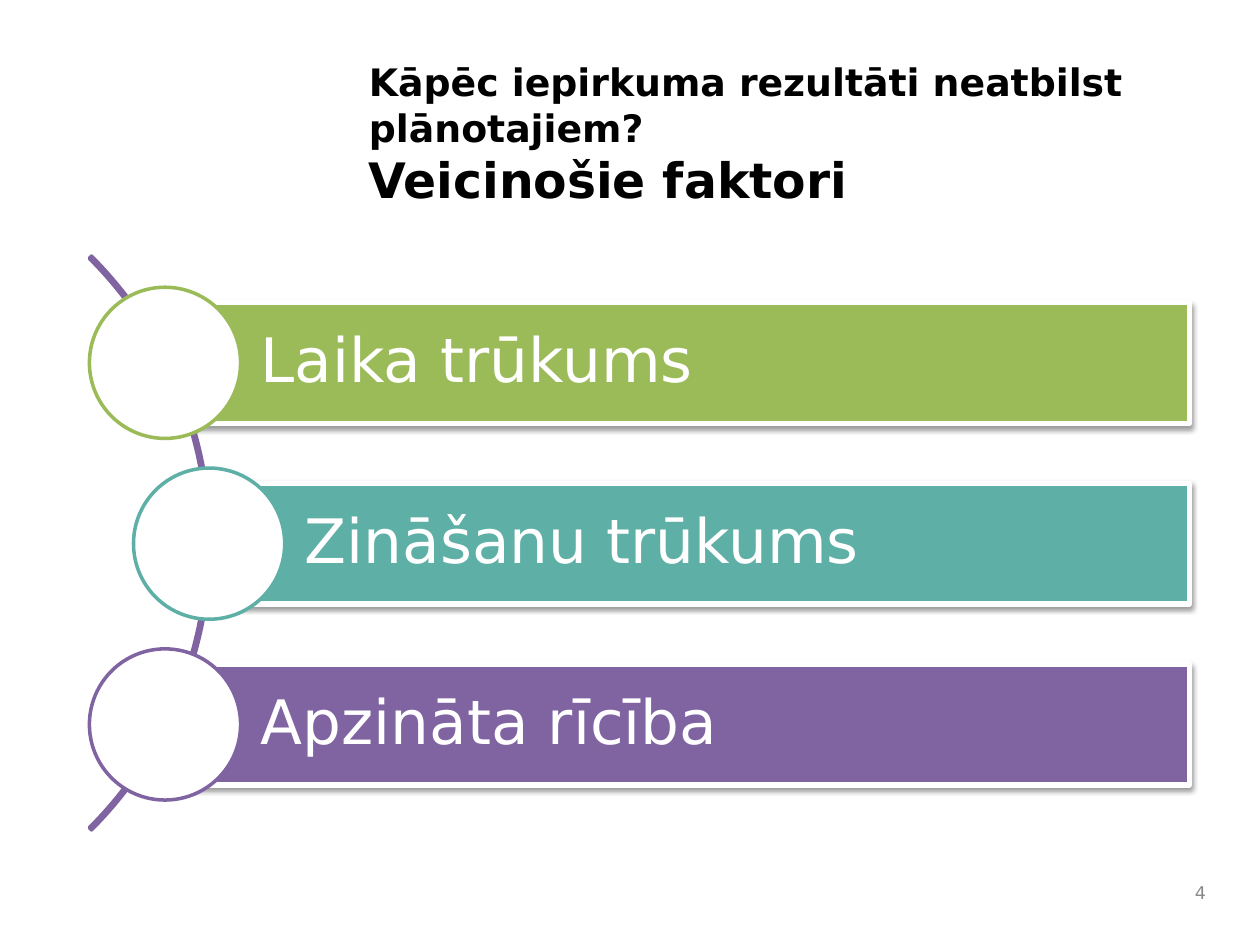
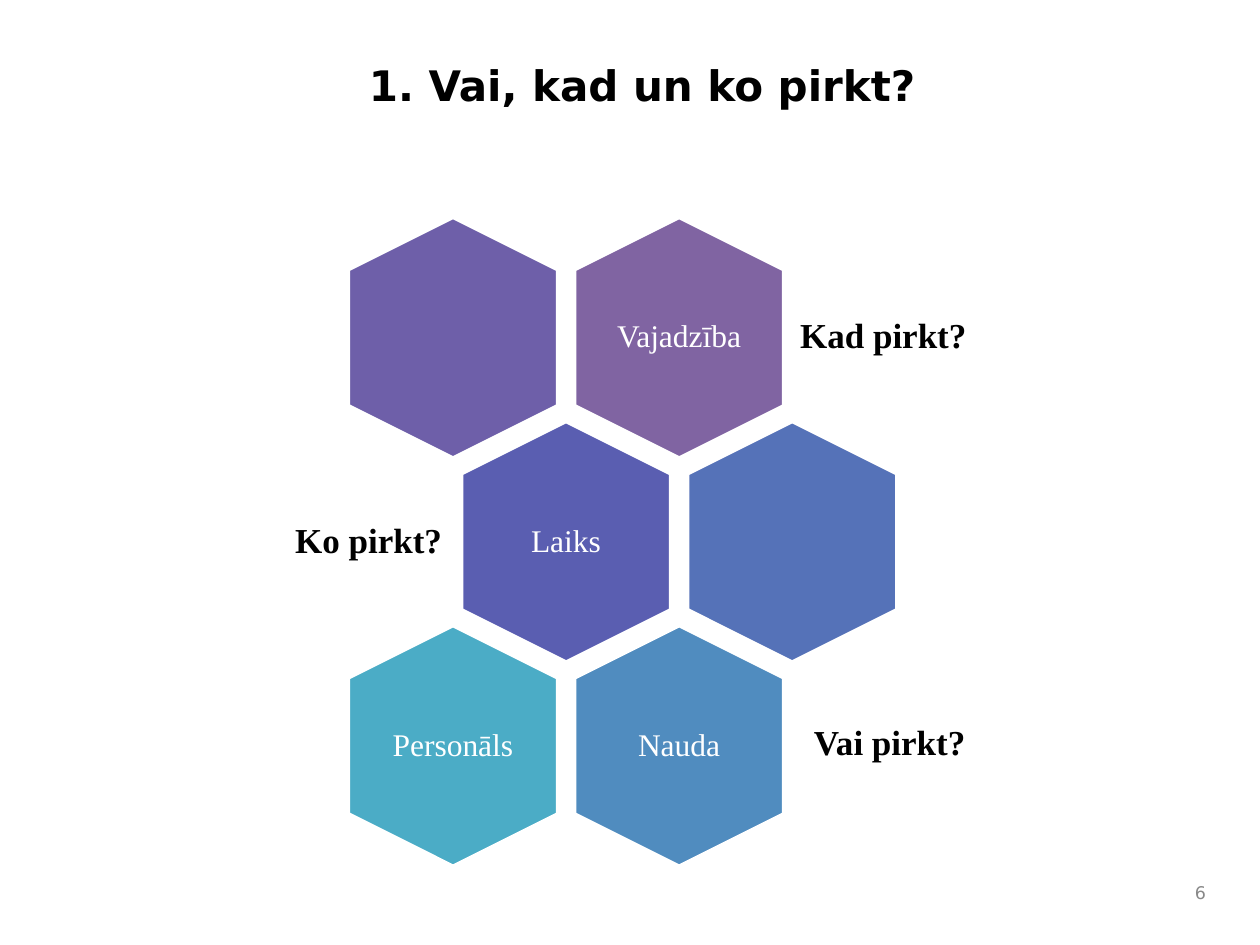
from dataclasses import dataclass

from lxml import etree
from pptx import Presentation
from pptx.dml.color import RGBColor
from pptx.enum import shapes, text
from pptx.oxml.ns import qn
from pptx.shapes.autoshape import Shape
from pptx.slide import Slide
from pptx.util import Inches, Pt

SANS, SERIF = "DejaVu Sans", "Times New Roman"
BLACK = RGBColor(0x00, 0x00, 0x00)
WHITE = RGBColor(0xFF, 0xFF, 0xFF)
GREY = RGBColor(0x89, 0x89, 0x89)
GREEN = RGBColor(0x9B, 0xBB, 0x59)
TEAL = RGBColor(0x5E, 0xAF, 0xA6)
PURPLE = RGBColor(0x80, 0x64, 0xA2)
VIOLET = RGBColor(0x6E, 0x5F, 0xA9)
INDIGO = RGBColor(0x5A, 0x5E, 0xB1)
BLUE = RGBColor(0x55, 0x72, 0xB8)
SKY = RGBColor(0x50, 0x8C, 0xBF)
CYAN = RGBColor(0x4B, 0xAC, 0xC6)

LEFT, CENTER, RIGHT = text.PP_ALIGN.LEFT, text.PP_ALIGN.CENTER, text.PP_ALIGN.RIGHT
TOP, MIDDLE = text.MSO_ANCHOR.TOP, text.MSO_ANCHOR.MIDDLE
KIND = shapes.MSO_SHAPE


@dataclass(frozen=True)
class Box:
    left: float
    top: float
    width: float
    height: float

    def lengths(self) -> tuple:
        return tuple(Inches(n) for n in (self.left, self.top, self.width, self.height))


@dataclass(frozen=True)
class Factor:
    label: str
    color: RGBColor
    circle_left: float


@dataclass(frozen=True)
class Cell:
    row: int
    column: int
    color: RGBColor
    label: str = ""


@dataclass(frozen=True)
class Question:
    label: str
    box: Box
    align: text.PP_ALIGN = LEFT


FACTORS = (
    Factor("Laika trūkums", GREEN, 0.71),
    Factor("Zināšanu trūkums", TEAL, 1.06),
    Factor("Apzināta rīcība", PURPLE, 0.71),
)
FACTOR_TOP, FACTOR_STEP = 2.28, 1.435
CIRCLE = 1.2
BAR_HEIGHT, BAR_RIGHT = 0.96, 9.44

CELLS = (
    Cell(0, 1, PURPLE, "Vajadzība"),
    Cell(0, 0, VIOLET),
    Cell(1, 0, INDIGO, "Laiks"),
    Cell(1, 1, BLUE),
    Cell(2, 1, SKY, "Nauda"),
    Cell(2, 0, CYAN, "Personāls"),
)
COMB_LEFT, COMB_TOP = 2.64, 1.85
COLUMN_STEP, ROW_STEP = 1.795, 1.62
HEX_WIDTH, HEX_HEIGHT = 1.91, 1.66
LABEL_WIDTH, LABEL_HEIGHT = 1.14, 1.31

QUESTIONS = (
    Question("Kad pirkt?", Box(6.27, 2.1, 2.13, 1.15)),
    Question("Ko pirkt?", Box(1.53, 3.73, 2.06, 1.15), RIGHT),
    Question("Vai pirkt?", Box(6.38, 5.33, 2.13, 1.15)),
)


def write(shape: Shape, *lines: tuple[str, float], font: str = SANS,
          color: RGBColor = BLACK, bold: bool = False, align: text.PP_ALIGN = LEFT,
          anchor: text.MSO_ANCHOR = MIDDLE, spacing: float = 0.9,
          insets: tuple = (0.1, 0.05, 0.1, 0.05)) -> None:
    """Fill a shape with one paragraph; each line is its words and point size."""
    frame = shape.text_frame
    frame.word_wrap = True
    frame.vertical_anchor = anchor
    (frame.margin_left, frame.margin_top,
     frame.margin_right, frame.margin_bottom) = (Inches(n) for n in insets)
    para = frame.paragraphs[0]
    para.alignment = align
    para.line_spacing = spacing
    for index, (words, size) in enumerate(lines):
        if index:
            para.add_line_break()
        span = para.add_run()
        span.text = words
        span.font.name = font
        span.font.size = Pt(size)
        span.font.bold = bold
        span.font.color.rgb = color


def add_text(slide: Slide, box: Box, *lines: tuple[str, float], **style) -> None:
    write(slide.shapes.add_textbox(*box.lengths()), *lines, **style)


def add_shape(slide: Slide, kind: KIND, box: Box, fill: RGBColor | None,
              line: RGBColor, width: float = 2) -> Shape:
    shape = slide.shapes.add_shape(kind, *box.lengths())
    shape.shadow.inherit = False
    if fill is None:
        shape.fill.background()
    else:
        shape.fill.solid()
        shape.fill.fore_color.rgb = fill
    shape.line.color.rgb = line
    shape.line.width = Pt(width)
    return shape


def drop_shadow(shape: Shape) -> None:
    effects = shape._element.spPr.find(qn("a:effectLst"))
    shadow = etree.SubElement(effects, qn("a:outerShdw"), blurRad=str(Pt(3.1)),
                              dist=str(Pt(1.6)), dir="5400000", rotWithShape="0")
    color = etree.SubElement(shadow, qn("a:srgbClr"), val=str(BLACK))
    etree.SubElement(color, qn("a:alpha"), val="38000")


def start_page(deck: Presentation, number: int, title_width: float,
               *title: tuple[str, float]) -> Slide:
    """Add a blank page with its title and page number."""
    page = deck.slides.add_slide(deck.slide_layouts[6])
    add_text(page, Box(2.83, 0.42, title_width, 1.13), *title,
             bold=True, anchor=TOP, spacing=1.0)
    add_text(page, Box(9.21, 6.92, 0.46, 0.33), (str(number), 10),
             color=GREY, align=RIGHT, spacing=1.0)
    return page


def add_factor(page: Slide, factor: Factor, top: float) -> None:
    bar_left = factor.circle_left + CIRCLE / 2
    bar = add_shape(page, KIND.RECTANGLE,
                    Box(bar_left, top + (CIRCLE - BAR_HEIGHT) / 2,
                        BAR_RIGHT - bar_left, BAR_HEIGHT),
                    factor.color, WHITE, 3)
    drop_shadow(bar)
    write(bar, (factor.label, 35), color=WHITE, insets=(0.76, 0.1, 0.1, 0.1))
    add_shape(page, KIND.OVAL, Box(factor.circle_left, top, CIRCLE, CIRCLE),
              WHITE, factor.color)


def add_cell(page: Slide, cell: Cell) -> None:
    """Draw one honeycomb cell; odd rows shift by half a column."""
    left = COMB_LEFT + COLUMN_STEP * (cell.column + cell.row % 2 / 2)
    top = COMB_TOP + ROW_STEP * cell.row
    hexagon = add_shape(page, KIND.HEXAGON, Box(left, top, HEX_WIDTH, HEX_HEIGHT),
                        cell.color, WHITE)
    hexagon.adjustments[0] = 0.25
    hexagon.adjustments[1] = 1.1547
    hexagon.rotation = 90
    if cell.label:
        box = Box(left + (HEX_WIDTH - LABEL_WIDTH) / 2,
                  top + (HEX_HEIGHT - LABEL_HEIGHT) / 2, LABEL_WIDTH, LABEL_HEIGHT)
        add_text(page, box, (cell.label, 18), font=SERIF, color=WHITE,
                 align=CENTER, insets=(0.05,) * 4)


def build_factors(deck: Presentation) -> None:
    page = start_page(deck, 4, 6.67,
                      ("Kāpēc iepirkuma rezultāti neatbilst plānotajiem?", 21.6),
                      ("Veicinošie faktori", 27.9))
    arc = add_shape(page, KIND.BLOCK_ARC, Box(-4.77, 1.09, 6.44, 6.44), None, PURPLE)
    for index, value in enumerate((189, 27, 0.004)):
        arc.adjustments[index] = value
    for index, factor in enumerate(FACTORS):
        add_factor(page, factor, FACTOR_TOP + index * FACTOR_STEP)


def build_honeycomb(deck: Presentation) -> None:
    page = start_page(deck, 6, 6.98, ("1. Vai, kad un ko pirkt?", 24))
    for cell in CELLS:
        add_cell(page, cell)
    for question in QUESTIONS:
        add_text(page, question.box, (question.label, 20), font=SERIF, bold=True,
                 align=question.align, insets=(0.08,) * 4)


def main() -> None:
    deck = Presentation()
    deck.slide_width, deck.slide_height = Inches(10), Inches(7.5)
    build_factors(deck)
    build_honeycomb(deck)
    deck.save("out.pptx")


if __name__ == "__main__":
    main()
